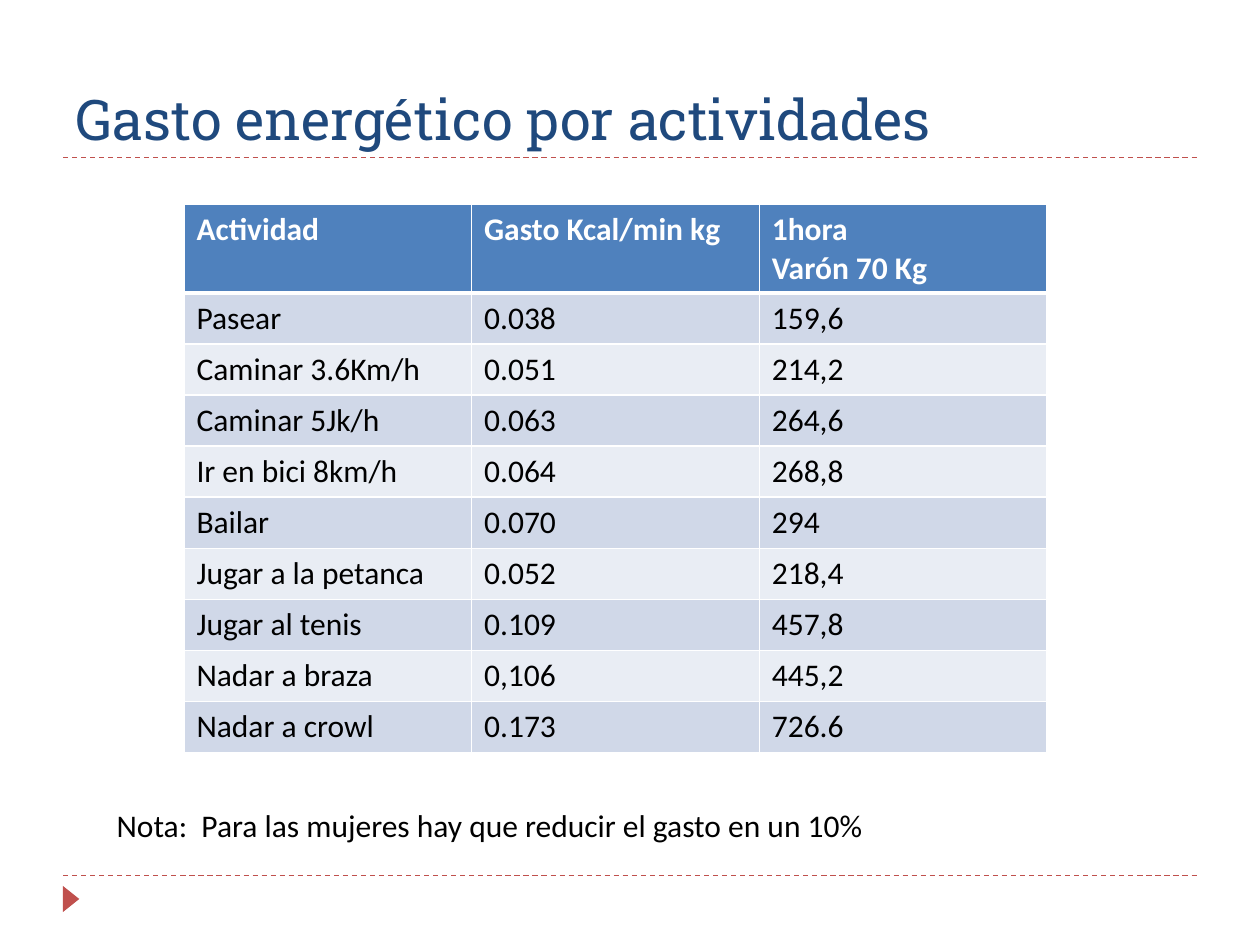
import pptx
import pptx.dml.color
import pptx.enum.dml
import pptx.enum.shapes
import pptx.enum.text
import pptx.oxml
import pptx.oxml.ns
import pptx.util

Pt = pptx.util.Pt
RGBColor = pptx.dml.color.RGBColor

WHITE = RGBColor(0xFF, 0xFF, 0xFF)
BLACK = RGBColor(0x00, 0x00, 0x00)
NAVY = RGBColor(0x1F, 0x49, 0x7D)
RED = RGBColor(0xC0, 0x50, 0x4D)
HEADER_BLUE = RGBColor(0x4F, 0x81, 0xBD)
BAND_DARK = RGBColor(0xD0, 0xD8, 0xE8)
BAND_LIGHT = RGBColor(0xE9, 0xED, 0xF4)

ROWS = [
    ("Actividad", "Gasto Kcal/min kg", "1hora\nVarón 70 Kg"),
    ("Pasear", "0.038", "159,6"),
    ("Caminar 3.6Km/h", "0.051", "214,2"),
    ("Caminar 5Jk/h", "0.063", "264,6"),
    ("Ir en bici 8km/h", "0.064", "268,8"),
    ("Bailar", "0.070", "294"),
    ("Jugar a la petanca", "0.052", "218,4"),
    ("Jugar al tenis", "0.109", "457,8"),
    ("Nadar a braza", "0,106", "445,2"),
    ("Nadar a crowl", "0.173", "726.6"),
]
HEADER_HEIGHT, ROW_HEIGHT, COLUMN_WIDTH = 50.4, 29.2, 164.4


def write_text(text_frame, text, color, **font_values):
    text_frame.text = text
    values = {"name": "Calibri", "size": Pt(18), "bold": False, **font_values}
    for paragraph in text_frame.paragraphs:
        for run in paragraph.runs:
            for name, value in values.items():
                setattr(run.font, name, value)
            run.font.color.rgb = color


def set_borders(cell, widths):
    """Add white borders; widths maps a side (L, R, T, B) to points."""
    properties = cell._tc.get_or_add_tcPr()
    for position, (side, width) in enumerate(widths.items()):
        border = pptx.oxml.parse_xml(
            f'<a:ln{side} {pptx.oxml.ns.nsdecls("a")} w="{Pt(width)}">'
            f'<a:solidFill><a:srgbClr val="{WHITE}"/></a:solidFill></a:ln{side}>'
        )
        properties.insert(position, border)


presentation = pptx.Presentation()
presentation.slide_width, presentation.slide_height = Pt(720), Pt(540)
slide = presentation.slides.add_slide(presentation.slide_layouts[6])

# Dashed rules and page marker
for y in (500.4, 90):
    rule = slide.shapes.add_connector(
        pptx.enum.shapes.MSO_CONNECTOR.STRAIGHT, Pt(36), Pt(y), Pt(684), Pt(y)
    )
    rule.line.color.rgb = RED
    rule.line.width = Pt(0.75)
    rule.line.dash_style = pptx.enum.dml.MSO_LINE.DASH
    rule._element.spPr.append(
        pptx.oxml.parse_xml(f'<a:effectLst {pptx.oxml.ns.nsdecls("a")}/>')
    )

marker = slide.shapes.add_shape(
    pptx.enum.shapes.MSO_SHAPE.ISOSCELES_TRIANGLE, Pt(33.1), Pt(509), Pt(15), Pt(9.4)
)
marker.rotation = 90
marker.shadow.inherit = False
marker.fill.solid()
marker.fill.fore_color.rgb = RED
marker.line.fill.background()

# Title
title = slide.shapes.add_textbox(Pt(36), Pt(18), Pt(648), Pt(72))
title.text_frame.word_wrap = True
title.text_frame.vertical_anchor = pptx.enum.text.MSO_ANCHOR.BOTTOM
write_text(title.text_frame, "Gasto energético por actividades", NAVY,
           name="Roboto Slab", size=Pt(32))

# Energy table
table = slide.shapes.add_table(
    len(ROWS), len(ROWS[0]), Pt(105.1), Pt(116.9), Pt(3 * COLUMN_WIDTH),
    Pt(HEADER_HEIGHT + ROW_HEIGHT * (len(ROWS) - 1)),
).table
for column in table.columns:
    column.width = Pt(COLUMN_WIDTH)
for row_index, texts in enumerate(ROWS):
    is_header = row_index == 0
    table.rows[row_index].height = Pt(HEADER_HEIGHT if is_header else ROW_HEIGHT)
    band = BAND_DARK if row_index % 2 else BAND_LIGHT
    for column_index, text in enumerate(texts):
        cell = table.cell(row_index, column_index)
        cell.fill.solid()
        cell.fill.fore_color.rgb = HEADER_BLUE if is_header else band
        write_text(cell.text_frame, text, WHITE if is_header else BLACK, bold=is_header)
        set_borders(cell, {"L": 1, "R": 1, "T": 3 if row_index == 1 else 1,
                           "B": 3 if is_header else 1})

# Note
note = slide.shapes.add_textbox(Pt(59.6), Pt(457.2), Pt(470.9), Pt(29))
note.text_frame.word_wrap = True
note.text_frame.auto_size = pptx.enum.text.MSO_AUTO_SIZE.SHAPE_TO_FIT_TEXT
write_text(note.text_frame,
           "Nota:  Para las mujeres hay que reducir el gasto en un 10%", BLACK)

presentation.save("out.pptx")
